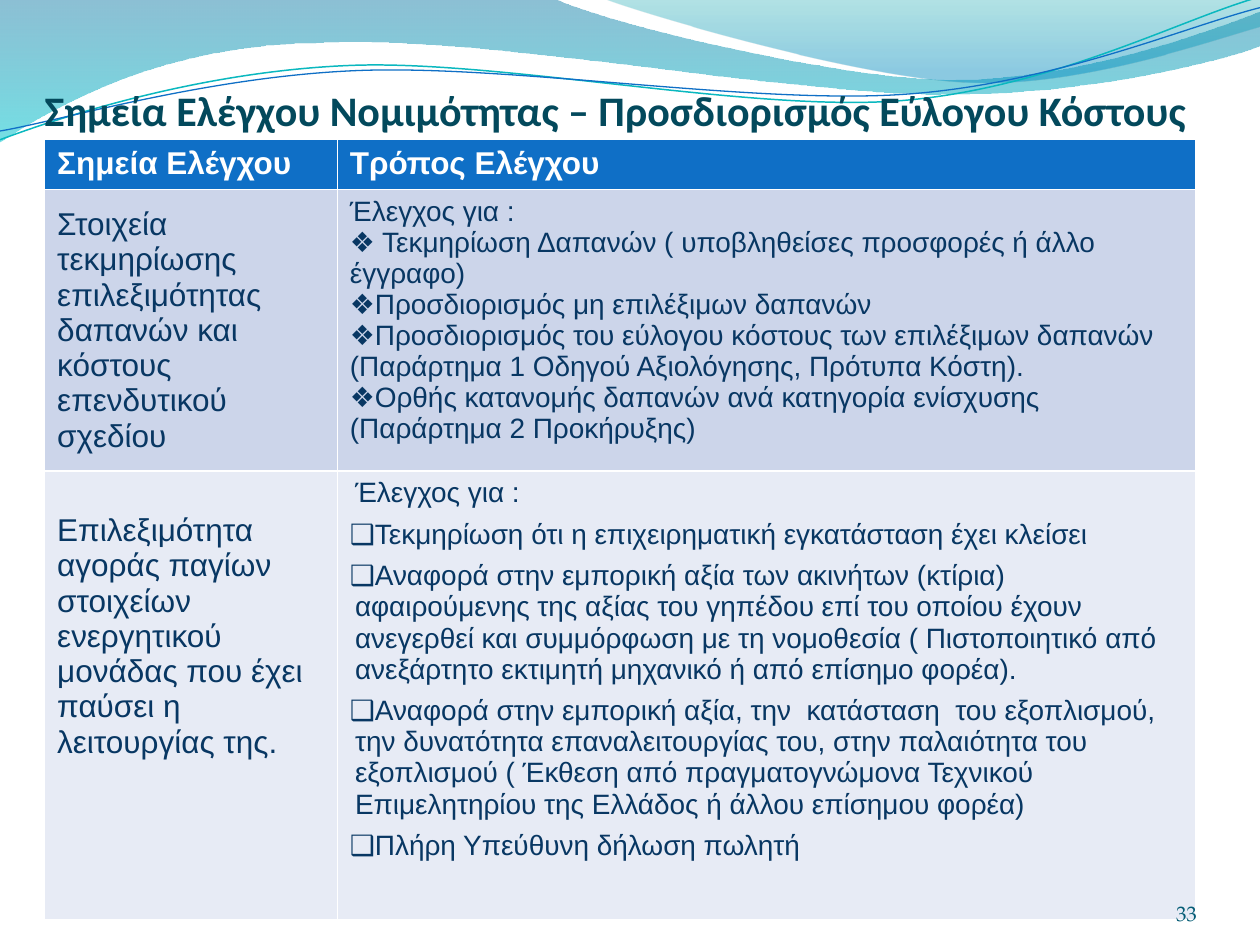
"""Builds the slide on legality checkpoints and reasonable cost."""
from typing import NamedTuple

from lxml.etree import SubElement as Sub
from pptx import Presentation
from pptx.dml.color import RGBColor as RGB
from pptx.enum.text import MSO_ANCHOR as Anchor, PP_ALIGN as Align
from pptx.oxml.ns import qn
from pptx.util import Pt

COLORS = {
    "header": "0F6FC6", "band": "CCD5EA", "pale": "E7EBF5", "white": "FFFFFF",
    "title": "03495C", "body": "083763", "number": "045C75", "cyan": "0AB8BF",
    "deep": "0074A1", "aqua": "00C6CF", "teal": "00A1A9", "sky": "008BBF",
}
HEAD = {"name": "Arial", "size": Pt(18), "bold": True, "color": "white"}
LABEL = {"name": "Arial", "size": Pt(18), "bold": False, "color": "body"}
BODY = {**LABEL, "size": Pt(16)}


class Stop(NamedTuple):
    position: float
    color: str
    alpha: int


class Wave(NamedTuple):
    start: tuple
    segments: list
    stops: tuple = ()
    line: str = ""
    width: float = 0


class Para(NamedTuple):
    text: str
    bullet: str = ""
    margin: float = 0
    before: float = 0


class CellText(NamedTuple):
    paras: list
    style: dict
    fill: str
    anchor: Anchor = Anchor.TOP
    top: float = 3.6


BANDS = [
    Wave((0, -0.7), [
        (316.8, -0.7),
        (342.7, 12.2, 478, 45.4, 545.8, 45.4),
        (614.2, 45.4, 689.8, 18.7, 720, 6.5),
        (720.7, 25.9),
        (707.8, 31.7, 626.4, 54.7, 537.1, 54),
        (447.8, 54, 275, 20.2, 185, 24.5),
        (92.9, 25.2, 33.1, 59.8, -0.7, 81.4),
    ], (Stop(0, "deep", 45), Stop(1, "aqua", 55))),
    Wave((344.9, -0.7), [
        (366.5, 7.9, 491, 44.6, 553.7, 46.8),
        (616.3, 49.7, 691.9, 23, 720, 15.1),
        (720, 0),
    ], (Stop(0, "teal", 30), Stop(0.8, "sky", 45))),
]
THREADS = [
    Wave((-1.4, 62.9), [
        (33.7, 51.6, 114, 29.4, 199.8, 29.9),
        (284.8, 30.3, 425.8, 67.2, 512.4, 64.9),
        (599, 62.4, 676.4, 25.7, 720.2, 15.6),
    ], line="cyan", width=0.85),
    Wave((-1.1, 57.9), [
        (33, 53.8, 118.3, 32.5, 204, 33),
        (290.5, 33.5, 429, 63.1, 515.5, 61.3),
        (601.4, 59.6, 678.5, 30.1, 721.4, 21.4),
    ], line="header", width=0.75),
]


def diamond(text: str) -> Para:
    """Return an item with a diamond bullet."""
    return Para(text, "❖")


def box(text: str) -> Para:
    """Return an item with a box bullet."""
    return Para(text, "❑", 2.9, 6)


ROWS = [
    [CellText([Para(t)], HEAD, "header")
     for t in ("Σημεία Ελέγχου", "Τρόπος Ελέγχου")],
    [
        CellText([Para("Στοιχεία τεκμηρίωσης επιλεξιμότητας δαπανών και κόστους "
                       "επενδυτικού σχεδίου")], LABEL, "band", Anchor.MIDDLE),
        CellText([
            Para("Έλεγχος για :"),
            diamond(" Τεκμηρίωση Δαπανών ( υποβληθείσες προσφορές ή άλλο έγγραφο)"),
            diamond("Προσδιορισμός μη επιλέξιμων δαπανών"),
            diamond("Προσδιορισμός του εύλογου κόστους των επιλέξιμων δαπανών  "
                    "(Παράρτημα 1 Οδηγού Αξιολόγησης, Πρότυπα Κόστη)."),
            diamond("Ορθής κατανομής δαπανών ανά κατηγορία ενίσχυσης "
                    "(Παράρτημα 2 Προκήρυξης)"),
        ], BODY, "band"),
    ],
    [
        CellText([Para("Επιλεξιμότητα αγοράς παγίων στοιχείων ενεργητικού μονάδας "
                       "που έχει παύσει η λειτουργίας της.")], LABEL, "pale", top=24),
        CellText([
            Para("Έλεγχος για :", margin=2.9),
            box("Τεκμηρίωση ότι η επιχειρηματική εγκατάσταση έχει κλείσει"),
            box("Αναφορά στην εμπορική αξία των ακινήτων (κτίρια) αφαιρούμενης της "
                "αξίας του γηπέδου επί του οποίου έχουν ανεγερθεί και συμμόρφωση με "
                "τη νομοθεσία ( Πιστοποιητικό από ανεξάρτητο εκτιμητή μηχανικό ή από "
                "επίσημο φορέα)."),
            box("Αναφορά στην εμπορική αξία, την  κατάσταση  του εξοπλισμού, την "
                "δυνατότητα επαναλειτουργίας του, στην παλαιότητα του εξοπλισμού "
                "( Έκθεση από πραγματογνώμονα Τεχνικού Επιμελητηρίου της Ελλάδος ή "
                "άλλου επίσημου φορέα)"),
            box("Πλήρη Υπεύθυνη δήλωση πωλητή"),
        ], BODY, "pale"),
    ],
]


def rgb(name: str) -> RGB:
    """Look up a named colour."""
    return RGB.from_string(COLORS[name])


def add_wave(shapes, wave: Wave):
    """Add an outline of straight lines and cubic curves."""
    builder = shapes.build_freeform(*map(Pt, wave.start))
    for seg in wave.segments:
        points = zip(map(Pt, seg[::2]), map(Pt, seg[1::2]))
        builder.add_line_segments(list(points), close=False)
    s = builder.convert_to_shape()
    s.shadow.inherit = False
    outline = next(s._element.iter(qn("a:path")))
    steps = iter(outline.findall(qn("a:lnTo")))
    for seg in wave.segments:
        curve = next(steps)
        if len(seg) == 6:
            curve_to = outline.makeelement(qn("a:cubicBezTo"))
            curve.addprevious(curve_to)
            for step in (curve, next(steps), next(steps)):
                curve_to.append(step[0])
                outline.remove(step)
    return s


def add_band(shapes, wave: Wave) -> None:
    """Add a closed band with a translucent vertical gradient."""
    s = add_wave(shapes, wave)
    Sub(next(s._element.iter(qn("a:path"))), qn("a:close"))
    s.line.fill.background()
    s.fill.gradient()
    s.fill.gradient_angle = 270
    for target, stop in zip(s.fill.gradient_stops, wave.stops):
        target.position = stop.position
        target.color.rgb = rgb(stop.color)
    for el, stop in zip(s._element.spPr.iter(qn("a:srgbClr")), wave.stops):
        Sub(el, qn("a:alpha"), val=str(stop.alpha * 1000))


def add_thread(shapes, wave: Wave) -> None:
    """Add a thin, slightly turned curved line."""
    s = add_wave(shapes, wave)
    s.rotation = 357.3
    s.fill.background()
    s.line.color.rgb = rgb(wave.line)
    s.line.width = Pt(wave.width)


def write(tf, paras: list, style: dict) -> None:
    """Write paragraphs with their bullets and font values."""
    for i, para in enumerate(paras):
        p = tf.add_paragraph() if i else tf.paragraphs[0]
        if para.before:
            p.space_before = Pt(para.before)
        pPr = p._p.get_or_add_pPr()
        pPr.set("marL", str(Pt(para.margin)))
        pPr.set("indent", str(-Pt(para.margin) if para.bullet else 0))
        if para.bullet:
            Sub(pPr, qn("a:buFont"), typeface="Arial")
            Sub(pPr, qn("a:buChar"), char=para.bullet)
        r = p.add_run()
        r.text = para.text
        for key, value in style.items():
            if key == "color":
                r.font.color.rgb = rgb(value)
            else:
                setattr(r.font, key, value)


def add_text(slide, rect: tuple, text: str, style: dict, align: Align) -> None:
    """Add one line of bottom-anchored text."""
    tf = slide.shapes.add_textbox(*map(Pt, rect)).text_frame
    values = {"margin_left": 0, "margin_right": 0, "margin_top": 0,
              "margin_bottom": 0, "word_wrap": True,
              "vertical_anchor": Anchor.BOTTOM}
    for key, value in values.items():
        setattr(tf, key, value)
    write(tf, [Para(text)], style)
    tf.paragraphs[0].alignment = align


def add_checks(slide) -> None:
    """Add the table of checkpoints."""
    widths, heights = (167.3, 490.3), (28.8, 160.6, 256.3)
    table = slide.shapes.add_table(3, 2, Pt(25.5), Pt(79.6), Pt(sum(widths)),
                                   Pt(sum(heights))).table
    for column, width in zip(table.columns, widths):
        column.width = Pt(width)
    for row, height, contents in zip(table.rows, heights, ROWS):
        row.height = Pt(height)
        for cell, content in zip(row.cells, contents):
            cell.fill.solid()
            cell.fill.fore_color.rgb = rgb(content.fill)
            cell.vertical_anchor = content.anchor
            cell.margin_top = Pt(content.top)
            write(cell.text_frame, content.paras, content.style)


def main() -> None:
    """Build and save the slide."""
    prs = Presentation()
    prs.slide_width, prs.slide_height = Pt(720), Pt(540)
    slide = prs.slides.add_slide(prs.slide_layouts[6])
    for band in BANDS:
        add_band(slide.shapes, band)
    group = slide.shapes.add_group_shape()
    for thread in THREADS:
        add_thread(group.shapes, thread)
    add_text(slide, (25.5, 43.2, 674.6, 33.8),
             "Σημεία Ελέγχου Νομιμότητας – Προσδιορισμός Εύλογου Κόστους",
             {"name": "Calibri", "size": Pt(24), "bold": True, "color": "title"},
             Align.LEFT)
    add_checks(slide)
    add_text(slide, (624.2, 500.4, 59.8, 28.8), "33",
             {"name": "TeX Gyre Pagella", "size": Pt(12), "color": "number"},
             Align.RIGHT)
    prs.save("out.pptx")


if __name__ == "__main__":
    main()
